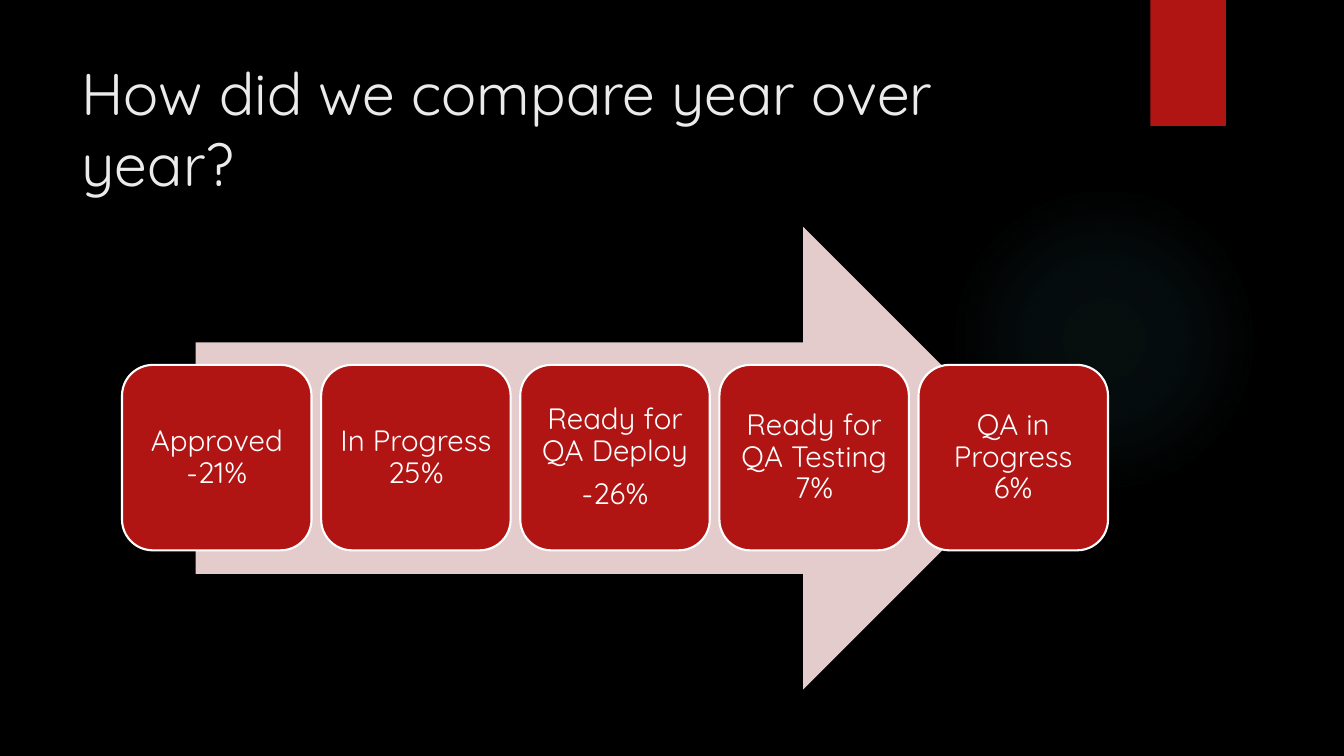
"""Build the year-over-year comparison slide."""
from lxml import etree
from pptx import Presentation
from pptx.dml.color import RGBColor
from pptx.enum import shapes, text
from pptx.oxml import ns
from pptx.util import Inches, Pt

BLACK = RGBColor(0x00, 0x00, 0x00)
WHITE = RGBColor(0xFF, 0xFF, 0xFF)
OFF_WHITE = RGBColor(0xEB, 0xEB, 0xEB)
RED = RGBColor(0xB0, 0x15, 0x13)
PINK = RGBColor(0xE4, 0xCC, 0xCC)
TEAL = RGBColor(0x50, 0xB9, 0xC1)
FONT = "Quicksand"
SHAPE = shapes.MSO_SHAPE


def add_shape(kind, left, top, width, height, fill):
    sp = slide.shapes.add_shape(kind, Inches(left), Inches(top), Inches(width), Inches(height))
    sp.shadow.inherit = False
    sp.fill.solid()
    sp.fill.fore_color.rgb = fill
    sp.line.fill.background()
    return sp


def write(p, words, size=21, color=WHITE, align=text.PP_ALIGN.CENTER, spacing=0.9, before=0):
    p.alignment = align
    p.line_spacing = spacing
    p.space_before = Pt(before)
    r = p.add_run()
    r.text = words
    r.font.name = FONT
    r.font.size = Pt(size)
    r.font.color.rgb = color


prs = Presentation()
prs.slide_width = Inches(13.33)
prs.slide_height = Inches(7.5)
slide = prs.slides.add_slide(prs.slide_layouts.get_by_name("Title Only"))
slide.background.fill.solid()
slide.background.fill.fore_color.rgb = BLACK

glow = add_shape(SHAPE.OVAL, 9.41, 1.83, 3.08, 3.08, TEAL)
stops = "".join(
    f'<a:gs pos="{pos * 1000}"><a:srgbClr val="{TEAL}"><a:alpha val="{alpha * 1000}"/></a:srgbClr></a:gs>'
    for pos, alpha in [(0, 7), (36, 6), (69, 0)]
)
gradient = etree.fromstring(
    f'<a:gradFill xmlns:a="{ns.nsuri("a")}"><a:gsLst>{stops}</a:gsLst><a:path path="circle">'
    '<a:fillToRect l="50000" t="50000" r="50000" b="50000"/></a:path></a:gradFill>'
)
solid = glow._element.spPr.find(ns.qn("a:solidFill"))
solid.getparent().replace(solid, gradient)

add_shape(SHAPE.RECTANGLE, 11.41, 0, 0.75, 1.25, RED)

title = slide.shapes.title
title.left, title.top = Inches(0.71), Inches(0.5)
title.width, title.height = Inches(10.29), Inches(1.53)
tf = title.text_frame
tf.word_wrap = True
tf.auto_size = text.MSO_AUTO_SIZE.NONE
tf.vertical_anchor = text.MSO_ANCHOR.MIDDLE
write(tf.paragraphs[0], "How did we compare year over year?", size=42, color=OFF_WHITE,
      align=text.PP_ALIGN.LEFT, spacing=1.0)

add_shape(SHAPE.RIGHT_ARROW, 1.94, 2.25, 8.32, 4.59, PINK)

stages = [
    ["Approved -21%"],
    ["In Progress 25%"],
    ["Ready for QA Deploy", "-26%"],
    ["Ready for QA Testing 7%"],
    ["QA in Progress 6%"],
]
for i, lines in enumerate(stages):
    sp = add_shape(SHAPE.ROUNDED_RECTANGLE, 1.21 + 1.975 * i, 3.62, 1.88, 1.84, RED)
    sp.line.color.rgb = WHITE
    sp.line.width = Pt(1.5)
    tf = sp.text_frame
    tf.word_wrap = True
    tf.vertical_anchor = text.MSO_ANCHOR.MIDDLE
    tf.margin_left = tf.margin_right = tf.margin_top = tf.margin_bottom = Inches(0.09)
    for n, words in enumerate(lines):
        p = tf.add_paragraph() if n else tf.paragraphs[0]
        write(p, words, before=8 if n else 0)

prs.save("out.pptx")
